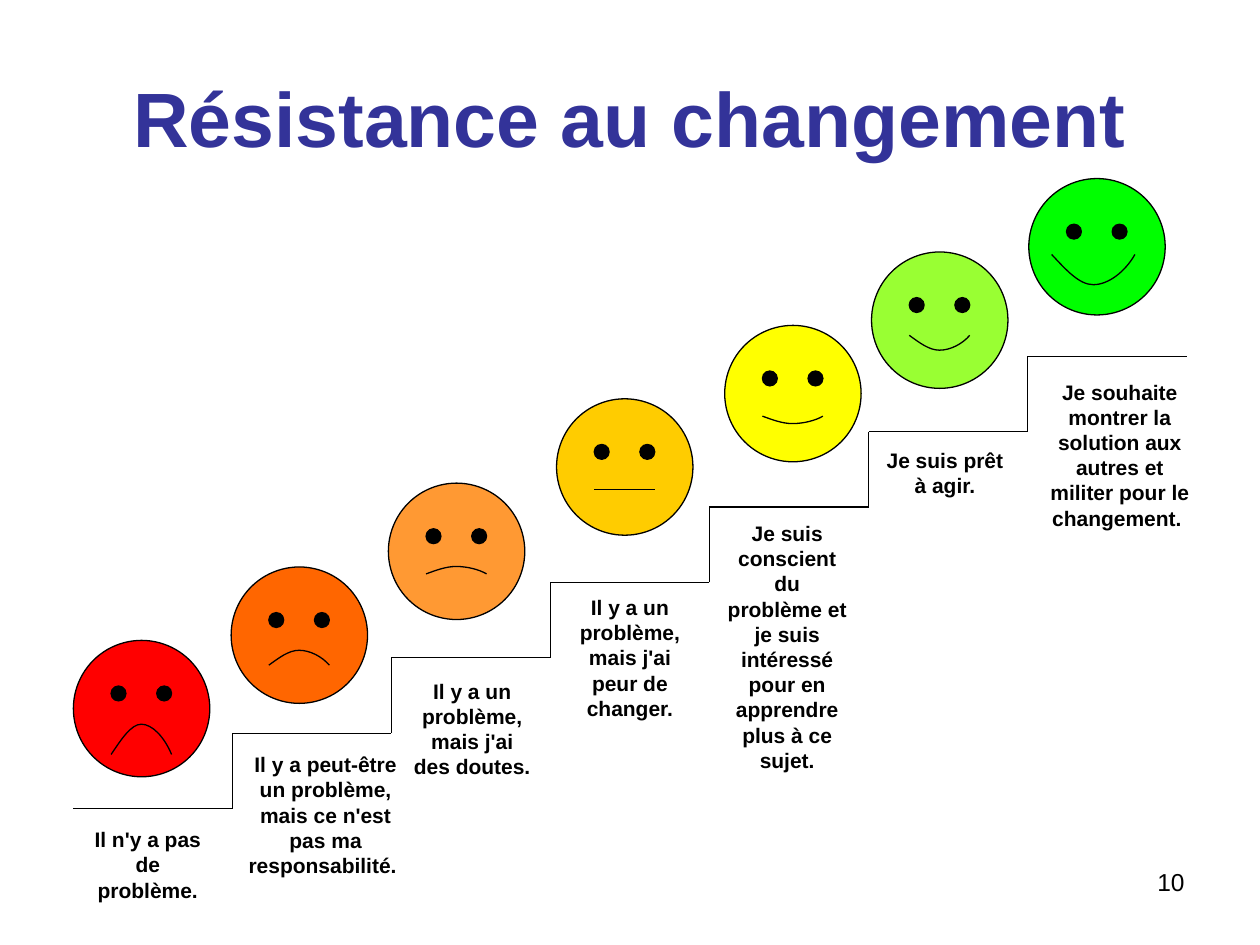
"""Build the slide on the seven steps of resistance to change."""
from itertools import pairwise
from typing import Any, NamedTuple

from lxml.etree import SubElement
from pptx import Presentation
from pptx.dml.color import RGBColor
from pptx.enum.shapes import MSO_CONNECTOR, MSO_SHAPE
from pptx.enum.text import MSO_ANCHOR, MSO_AUTO_SIZE, PP_ALIGN
from pptx.oxml.ns import qn
from pptx.util import Cm, Pt

HUES = {
    "black": "000000", "navy": "333399", "red": "FF0000", "rust": "FF6600",
    "peach": "FF9933", "gold": "FFCC00", "yellow": "FFFF00",
    "lime": "99FF33", "green": "00FF00",
}
FONTS = {
    "title": {"name": "Arial", "size": Pt(44), "bold": True},
    "label": {"name": "Arial", "size": Pt(12), "bold": True},
    "number": {"name": "Arial", "size": Pt(14), "bold": False},
}
FACE, EYE = 2.75, 0.3
RUN, RISE = 22.44 / 7, 1.52
BEND = [(0.17, 0.5), (0.33, 1), (0.5, 1), (0.68, 1), (0.88, 0.58), (1, 0)]


class Mouth(NamedTuple):
    left: float
    top: float
    width: float
    bend: float


class Step(NamedTuple):
    hue: str
    left: float
    top: float
    mouth: Mouth


class Label(NamedTuple):
    text: str
    left: float
    top: float
    width: float
    height: float


STEPS = [
    Step("red", 1.48, 12.91, Mouth(0.76, 2.3, 1.22, -0.61)),
    Step("rust", 4.66, 11.43, Mouth(0.76, 1.98, 1.22, -0.3)),
    Step("peach", 7.83, 9.74, Mouth(0.76, 1.83, 1.22, -0.15)),
    Step("gold", 11.22, 8.04, Mouth(0.76, 1.83, 1.22, 0)),
    Step("yellow", 14.61, 6.56, Mouth(0.76, 1.83, 1.22, 0.15)),
    Step("lime", 17.57, 5.08, Mouth(0.76, 1.68, 1.22, 0.3)),
    Step("green", 20.74, 3.6, Mouth(0.46, 1.53, 1.68, 0.61)),
]
LABELS = [
    Label("Il n'y a pas de problème.", 1.5, 16.54, 2.96, 1.27),
    Label("Il y a peut-être un problème, mais ce n'est pas ma responsabilité. ",
          4.66, 15.03, 3.81, 2.29),
    Label("Il y a un problème, mais j'ai des doutes. ", 8.04, 13.55, 2.96, 2.29),
    Label("Il y a un problème, mais j'ai peur de changer.", 11.22, 11.86, 2.96, 3.81),
    Label("Je suis conscient du problème et je suis intéressé pour en apprendre "
          "plus à ce sujet.", 14.39, 10.37, 2.96, 3.81),
    Label("Je suis prêt à agir.", 17.57, 8.89, 2.96, 1.78),
    Label("Je souhaite montrer la solution aux autres et militer pour le "
          "changement. ", 20.9, 7.52, 3.35, 3.3),
]


def tint(hue: str) -> RGBColor:
    """Return the colour of a named hue."""
    return RGBColor.from_string(HUES[hue])


def ink(item: Any) -> None:
    """Give an item the thin black line."""
    item.line.color.rgb = tint("black")
    item.line.width = Pt(0.75)


def style(para: Any, kind: str, hue: str, align: PP_ALIGN) -> None:
    """Format a paragraph."""
    para.alignment = align
    for key, value in FONTS[kind].items():
        setattr(para.font, key, value)
    para.font.color.rgb = tint(hue)


def disc(shapes: Any, left: float, top: float, size: float, hue: str) -> None:
    """Draw a filled circle."""
    shape = shapes.add_shape(MSO_SHAPE.OVAL, Cm(left), Cm(top), Cm(size), Cm(size))
    shape.shadow.inherit = False
    shape.fill.solid()
    shape.fill.fore_color.rgb = tint(hue)
    ink(shape)


def rule(shapes: Any, start: tuple, end: tuple) -> None:
    """Draw a straight line."""
    line = shapes.add_connector(MSO_CONNECTOR.STRAIGHT, *map(Cm, start + end))
    ink(line)
    SubElement(line._element.spPr, qn("a:effectLst"))


def curve(shapes: Any, left: float, top: float, mouth: Mouth) -> None:
    """Draw a bent mouth as two joined cubic curves."""
    dots = [(Cm(left + mouth.width * x), Cm(top + mouth.bend * y)) for x, y in BEND]
    pen = shapes.build_freeform(Cm(left), Cm(top))
    pen.add_line_segments(dots, close=False)
    shape = pen.convert_to_shape()
    shape.shadow.inherit = False
    shape.fill.background()
    ink(shape)
    trace = next(shape._element.iter(qn("a:path")))
    lines = trace.findall(qn("a:lnTo"))
    for half in (lines[:3], lines[3:]):
        cubic = SubElement(trace, qn("a:cubicBezTo"))
        for line in half:
            cubic.append(line[0])
            trace.remove(line)


def face(slide: Any, step: Step) -> None:
    """Draw one grouped face."""
    shapes = slide.shapes.add_group_shape().shapes
    disc(shapes, step.left, step.top, FACE, step.hue)
    left, top = step.left + step.mouth.left, step.top + step.mouth.top
    if step.mouth.bend:
        curve(shapes, left, top, step.mouth)
    else:
        rule(shapes, (left, top), (left + step.mouth.width, top))
    for gap in (0.76, 1.68):
        disc(shapes, step.left + gap, step.top + 0.92, EYE, "black")


def stairs(slide: Any) -> None:
    """Draw the staircase under the faces."""
    shapes = slide.shapes.add_group_shape().shapes
    nodes = [
        (1.48 + RUN * (i + side), 16.3 - RISE * i)
        for i in range(len(STEPS)) for side in (0, 1)
    ]
    for start, end in pairwise(nodes):
        rule(shapes, start, end)


def write(slide: Any, label: Label, kind: str, align: PP_ALIGN) -> Any:
    """Add a wrapped text box and return its frame."""
    box = slide.shapes.add_textbox(*map(Cm, label[1:]))
    frame = box.text_frame
    frame.word_wrap = True
    frame.text = label.text
    style(frame.paragraphs[0], kind, "black", align)
    return frame


def main() -> None:
    """Build and save the slide."""
    deck = Presentation()
    deck.slide_width, deck.slide_height = Cm(25.4), Cm(19.05)
    slide = deck.slides.add_slide(deck.slide_layouts[5])
    number = Label("10", 18.2, 17.35, 5.93, 1.32)
    write(slide, number, "number", PP_ALIGN.RIGHT)
    title = slide.shapes.title
    title.left, title.top = Cm(1.27), Cm(0.76)
    title.width, title.height = Cm(22.86), Cm(3.18)
    title.text = "Résistance au changement"
    title.text_frame.vertical_anchor = MSO_ANCHOR.MIDDLE
    style(title.text_frame.paragraphs[0], "title", "navy", PP_ALIGN.CENTER)
    for step in STEPS:
        face(slide, step)
    stairs(slide)
    for label in LABELS:
        frame = write(slide, label, "label", PP_ALIGN.CENTER)
        frame.auto_size = MSO_AUTO_SIZE.SHAPE_TO_FIT_TEXT
        frame.paragraphs[0].line_spacing = Pt(14.4)
    deck.save("out.pptx")


if __name__ == "__main__":
    main()
